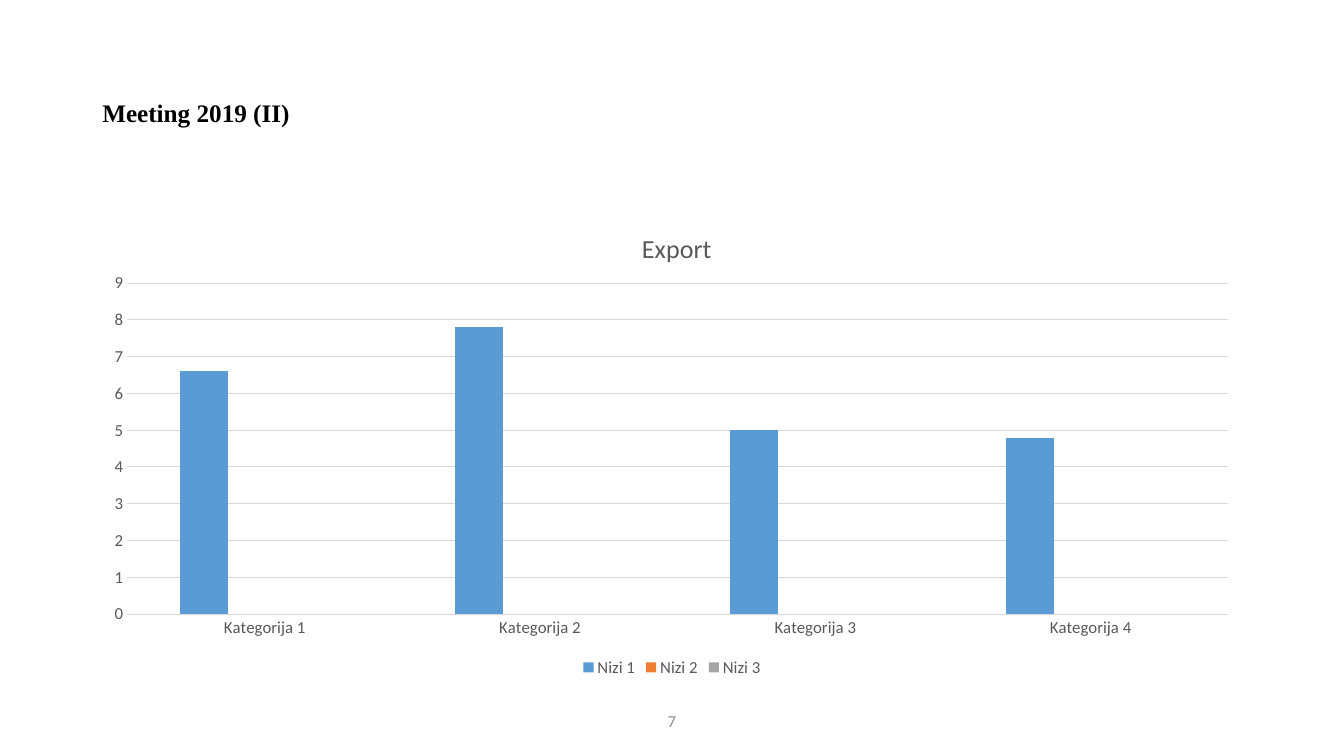
from dataclasses import dataclass

from lxml.etree import SubElement
from pptx import Presentation
from pptx.chart.data import CategoryChartData
from pptx.dml.color import RGBColor as RGB
from pptx.enum.chart import XL_CHART_TYPE as ChartType
from pptx.enum.chart import XL_LEGEND_POSITION as LegendPos
from pptx.enum.chart import XL_TICK_MARK as Tick
from pptx.enum.text import MSO_ANCHOR as Anchor
from pptx.enum.text import PP_ALIGN as Align
from pptx.oxml.ns import qn
from pptx.util import Emu, Pt

EMU_PER_PX = 9525


@dataclass(frozen=True)
class Theme:
    heading_font: str = "Times New Roman"
    body_font: str = "Calibri"
    black: str = "000000"
    grey: str = "595959"
    page_grey: str = "8C8C8C"
    rule: str = "D9D9D9"
    series: tuple = ("5B9BD5", "ED7D31", "A5A5A5")
    heading: float = 18
    chart_title: float = 18.6
    label: float = 12
    hairline: float = 0.75


THEME = Theme()
CATEGORIES = [f"Kategorija {n}" for n in range(1, 5)]
SERIES = {
    "Nizi 1": (6.6, 7.8, 5, 4.8),
    "Nizi 2": (None,) * 4,
    "Nizi 3": (None,) * 4,
}


def px(n):
    return Emu(n * EMU_PER_PX)


def style_font(font, name, size, color, bold=False):
    font.name, font.size, font.bold = name, Pt(size), bold
    font.color.rgb = RGB.from_string(color)


def style_line(line, color):
    line.color.rgb = RGB.from_string(color)
    line.width = Pt(THEME.hairline)


def add_text(slide, box, text, align, *font):
    tf = slide.shapes.add_textbox(*map(px, box)).text_frame
    tf.word_wrap = True
    tf.vertical_anchor = Anchor.MIDDLE
    p = tf.paragraphs[0]
    p.text = text
    p.alignment = align
    style_font(p.runs[0].font, *font)


def set_layout(element, index, **fractions):
    for old in element.findall(qn("c:layout")):
        element.remove(old)
    layout = SubElement(element, qn("c:layout"))
    element.insert(index, layout)
    manual = SubElement(layout, qn("c:manualLayout"))
    if "w" in fractions:
        SubElement(manual, qn("c:layoutTarget")).set("val", "inner")
    for side in ("x", "y"):
        SubElement(manual, qn(f"c:{side}Mode")).set("val", "edge")
    for side, value in fractions.items():
        SubElement(manual, qn(f"c:{side}")).set("val", str(value))


def style_axes(chart):
    label = (THEME.body_font, THEME.label, THEME.grey)
    for axis in (chart.category_axis, chart.value_axis):
        axis.major_tick_mark = axis.minor_tick_mark = Tick.NONE
        style_font(axis.tick_labels.font, *label)
    style_line(chart.category_axis.format.line, THEME.rule)
    values = chart.value_axis
    values.minimum_scale, values.maximum_scale, values.major_unit = 0, 9, 1
    values.format.line.fill.background()
    style_line(values.major_gridlines.format.line, THEME.rule)


def add_column_chart(slide, box, title):
    data = CategoryChartData()
    data.categories = CATEGORIES
    for name, values in SERIES.items():
        data.add_series(name, values)
    chart = slide.shapes.add_chart(
        ChartType.COLUMN_CLUSTERED, *map(px, box), data).chart
    style_font(chart.font, THEME.body_font, 10, THEME.black)

    chart.has_title = True
    p = chart.chart_title.text_frame.paragraphs[0]
    p.text = title
    style_font(p.runs[0].font, THEME.body_font, THEME.chart_title, THEME.grey)
    chart.chart_title.include_in_layout = False

    plot = chart.plots[0]
    plot.gap_width, plot.overlap = 219, -27
    plot.vary_by_categories = False
    for series, color in zip(plot.series, THEME.series):
        series.format.fill.solid()
        series.format.fill.fore_color.rgb = RGB.from_string(color)

    style_axes(chart)
    chart.has_legend = True
    chart.legend.position = LegendPos.BOTTOM
    chart.legend.include_in_layout = False
    style_font(chart.legend.font, THEME.body_font, THEME.label, THEME.grey)

    root = chart.element
    set_layout(next(root.iter(qn("c:title"))), 1, x=0.47, y=0.05)
    set_layout(next(root.iter(qn("c:plotArea"))), 0,
               x=0.03, y=0.17, w=0.95, h=0.69)


def main():
    prs = Presentation()
    prs.slide_width, prs.slide_height = px(1280), px(720)
    slide = prs.slides.add_slide(prs.slide_layouts[6])
    add_text(slide, (88, 38, 1104, 139), "Meeting 2019 (II)", Align.LEFT,
             THEME.heading_font, THEME.heading, THEME.black, True)
    add_column_chart(slide, (88, 192, 1104, 457), "Export")
    add_text(slide, (424, 667, 432, 38), "7", Align.CENTER,
             THEME.body_font, THEME.label, THEME.page_grey)
    prs.save("out.pptx")


if __name__ == "__main__":
    main()
